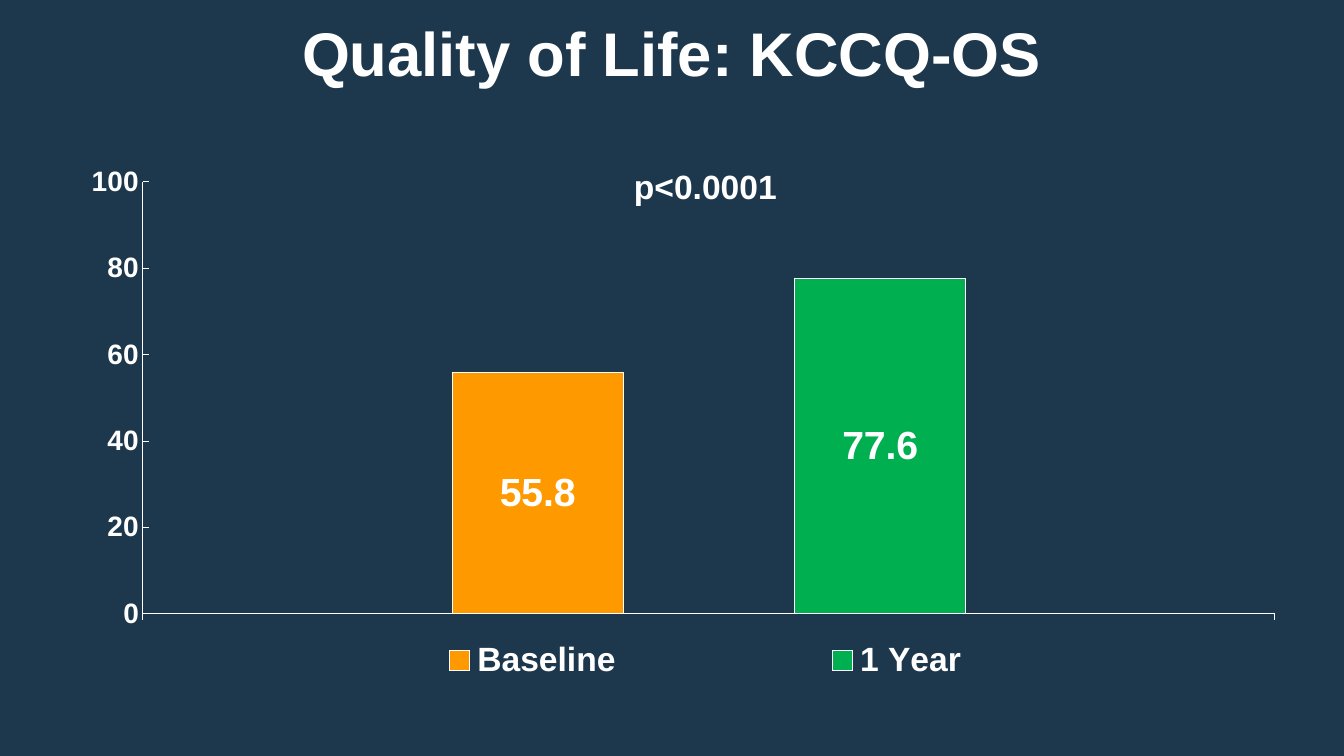
"""Build a slide with a column chart of quality of life at baseline and one year."""
from lxml import etree
from pptx import Presentation
from pptx.chart.data import CategoryChartData
from pptx.dml.color import RGBColor
from pptx.enum.chart import (XL_CHART_TYPE, XL_LABEL_POSITION, XL_LEGEND_POSITION,
                             XL_TICK_LABEL_POSITION, XL_TICK_MARK)
from pptx.enum.text import MSO_ANCHOR, MSO_AUTO_SIZE, PP_ALIGN
from pptx.oxml.ns import qn
from pptx.util import Pt

COLUMN = XL_CHART_TYPE.COLUMN_CLUSTERED
MIDDLE = XL_LABEL_POSITION.CENTER
BOTTOM = XL_LEGEND_POSITION.BOTTOM
HIDDEN = XL_TICK_LABEL_POSITION.NONE
IN, OUT, NONE = XL_TICK_MARK.INSIDE, XL_TICK_MARK.OUTSIDE, XL_TICK_MARK.NONE
NAVY = RGBColor(0x1D, 0x38, 0x4C)
WHITE = RGBColor(0xFF, 0xFF, 0xFF)
ORANGE = RGBColor(0xFF, 0x99, 0x00)
GREEN = RGBColor(0x00, 0xB0, 0x50)
SCALE = 914400 / 100.8


def px(*nums):
    """Turn px lengths into EMU."""
    return [round(n * SCALE) for n in nums]


def style(font, size):
    """Set the bold white font of the slide."""
    font.name, font.size, font.bold = "Arial", Pt(size), True
    font.color.rgb = WHITE


deck = Presentation()
deck.slide_width, deck.slide_height = px(1344, 756)
slide = deck.slides.add_slide(deck.slide_layouts[5])
slide.background.fill.solid()
slide.background.fill.fore_color.rgb = NAVY

title = slide.shapes.title
title.left, title.top, title.width, title.height = px(101, 10, 1142, 84)
frame = title.text_frame
frame.text = "Quality of Life: KCCQ-OS"
frame.margin_left = frame.margin_right = frame.margin_top = frame.margin_bottom = 0
frame.vertical_anchor = MSO_ANCHOR.MIDDLE
frame.paragraphs[0].alignment = PP_ALIGN.CENTER
style(frame.paragraphs[0].font, 44)

data = CategoryChartData(number_format="0.0")
data.categories = ["1"]
data.add_series("Baseline", [55.8])
data.add_series("1 Year", [77.6])
LEFT, TOP, WIDE, HIGH = 68, 155, 1233, 544
chart = slide.shapes.add_chart(COLUMN, *px(LEFT, TOP, WIDE, HIGH), data).chart
chart.has_title = False
style(chart.font, 10)

plot = chart.plots[0]
plot.gap_width, plot.overlap = 361, -100
plot.vary_by_categories = False
for series, color in zip(plot.series, [ORANGE, GREEN]):
    series.format.fill.solid()
    series.format.fill.fore_color.rgb = color
    series.format.line.color.rgb = WHITE
    series.format.line.width = Pt(0.75)
    labels = series.data_labels
    labels.show_value = True
    labels.position = MIDDLE
    labels.number_format, labels.number_format_is_linked = "0.0", False
    style(labels.font, 28)

for axis, tick in [(chart.category_axis, OUT), (chart.value_axis, IN)]:
    axis.has_major_gridlines = False
    axis.major_tick_mark, axis.minor_tick_mark = tick, NONE
    axis.format.line.color.rgb = WHITE
    axis.format.line.width = Pt(0.75)
chart.category_axis.tick_label_position = HIDDEN
value = chart.value_axis
value.minimum_scale, value.maximum_scale, value.major_unit = 0, 100, 20
value.tick_labels.number_format = "0"
value.tick_labels.number_format_is_linked = False
style(value.tick_labels.font, 20)

chart.has_legend = True
legend = chart.legend
legend.position = BOTTOM
legend.include_in_layout = False
style(legend.font, 24)

area = chart.element.find(".//" + qn("c:plotArea"))
key = chart.element.find(".//" + qn("c:legend"))
for host, spot, box in [(area, 0, (143, 182, 1132, 432)),
                        (key, 1, (244, 638, 923, 45))]:
    for old in host.findall(qn("c:layout")):
        host.remove(old)
    layout = etree.Element(qn("c:layout"))
    manual = etree.SubElement(layout, qn("c:manualLayout"))
    left, top, wide, high = box
    parts = {"xMode": "edge", "yMode": "edge",
             "x": (left - LEFT) / WIDE, "y": (top - TOP) / HIGH,
             "w": wide / WIDE, "h": high / HIGH}
    if host is area:
        parts = {"layoutTarget": "inner", **parts}
    for tag, val in parts.items():
        etree.SubElement(manual, qn("c:" + tag)).set("val", str(val))
    host.insert(spot, layout)

note = slide.shapes.add_textbox(*px(624, 161, 203, 50)).text_frame
note.word_wrap = True
note.auto_size = MSO_AUTO_SIZE.SHAPE_TO_FIT_TEXT
note.text = "p<0.0001"
style(note.paragraphs[0].font, 24)

deck.save("out.pptx")
